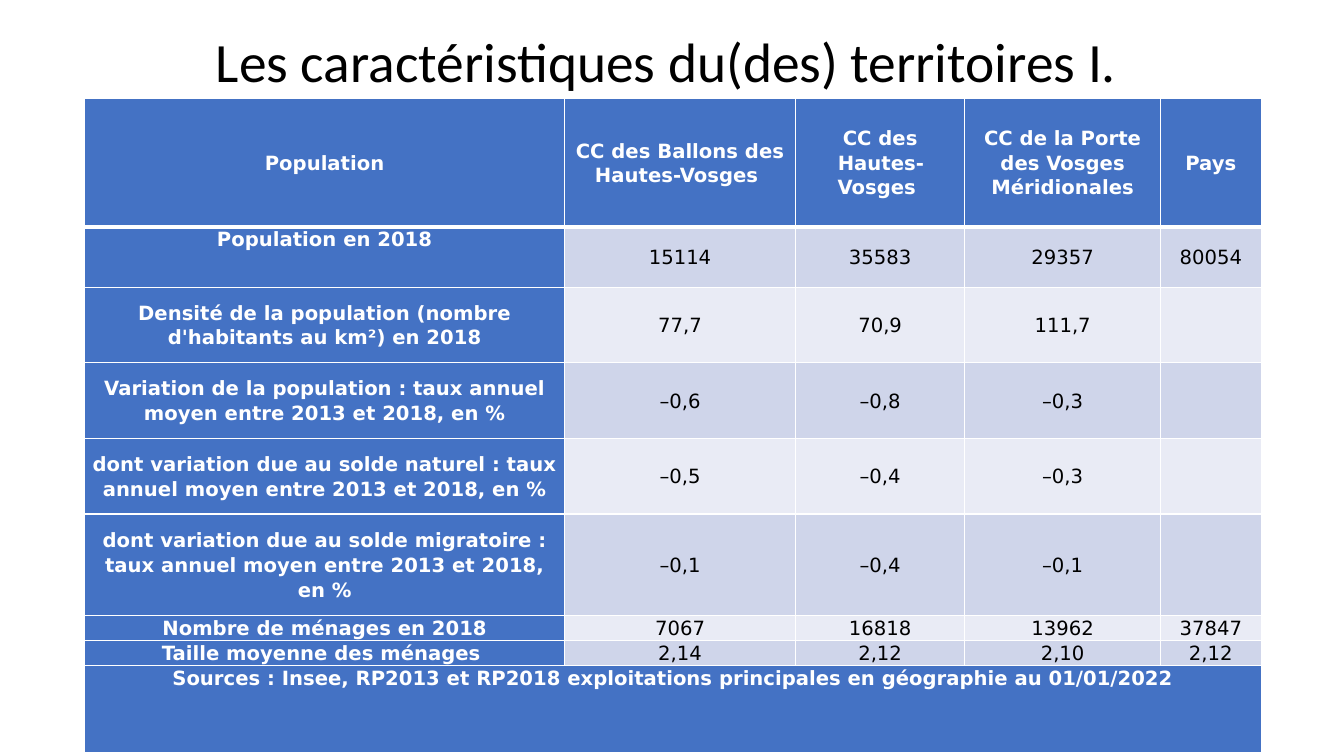
import pptx
import pptx.dml.color
import pptx.enum.text
import pptx.oxml
import pptx.oxml.ns
import pptx.util

Inches, Pt = pptx.util.Inches, pptx.util.Pt
RGBColor = pptx.dml.color.RGBColor
ANCHOR = pptx.enum.text.MSO_ANCHOR
CENTER = pptx.enum.text.PP_ALIGN.CENTER

BLUE = RGBColor(0x44, 0x72, 0xC4)
BANDS = RGBColor(0xCF, 0xD5, 0xEA), RGBColor(0xE9, 0xEB, 0xF5)
WHITE = RGBColor(255, 255, 255)
BLACK = RGBColor(0, 0, 0)

TITLE = "Les caractéristiques du(des) territoires I. "
HEADER = ["Population", "CC des Ballons des Hautes-Vosges ",
          "CC des Hautes-Vosges ",
          "CC de la Porte des Vosges Méridionales", "Pays"]
INDICATORS = [
    ["Population en 2018", "15114", "35583", "29357", "80054"],
    ["Densité de la population (nombre d'habitants au km²) en 2018",
     "77,7", "70,9", "111,7", ""],
    ["Variation de la population : taux annuel moyen entre 2013 et 2018, en %",
     "–0,6", "–0,8", "–0,3", ""],
    ["dont variation due au solde naturel : taux annuel moyen entre 2013 et 2018, en %",
     "–0,5", "–0,4", "–0,3", ""],
    ["dont variation due au solde migratoire : taux annuel moyen entre 2013 et 2018, en %",
     "–0,1", "–0,4", "–0,1", ""],
    ["Nombre de ménages en 2018", "7067", "16818", "13962", "37847"],
    ["Taille moyenne des ménages ", "2,14", "2,12", "2,10", "2,12"],
]
SOURCES = ("Sources : Insee, RP2013 et RP2018 exploitations principales "
           "en géographie au 01/01/2022")
ROWS = [HEADER, *INDICATORS, [SOURCES, "", "", "", ""]]
COL_WIDTHS = [4.76, 2.29, 1.68, 1.94, 1]
ROW_HEIGHTS = [1.27, 0.6, 0.75, 0.75, 0.75, 1.01, 0.24, 0.24, 0.87]
LAST = len(ROWS) - 1
TOP_ANCHORED = {(1, 0), (LAST, 0)}


def add_borders(cell, bottom_width):
    """Give the cell white borders, 1 pt except at the bottom."""
    tcPr = cell._tc.get_or_add_tcPr()
    for side, width in zip("LRTB", (1, 1, 1, bottom_width)):
        tcPr.append(pptx.oxml.parse_xml(
            f'<a:ln{side} {pptx.oxml.ns.nsdecls("a")} w="{Pt(width)}">'
            f'<a:solidFill><a:srgbClr val="{WHITE}"/></a:solidFill>'
            f'</a:ln{side}>'))


def format_cell(cell, row, col):
    """Fill one table cell and write its text."""
    is_heading = row in (0, LAST) or col == 0
    add_borders(cell, 3 if row == 0 else 1)
    cell.fill.solid()
    cell.fill.fore_color.rgb = BLUE if is_heading else BANDS[(row - 1) % 2]
    cell.margin_left = cell.margin_right = Inches(0.05)
    cell.margin_top = cell.margin_bottom = 0
    cell.vertical_anchor = (ANCHOR.TOP if (row, col) in TOP_ANCHORED
                            else ANCHOR.MIDDLE)
    cell.text = ROWS[row][col]
    p = cell.text_frame.paragraphs[0]
    p.alignment = CENTER
    p.line_spacing = 1.07
    p.font.name, p.font.size = "DejaVu Sans", Pt(14)
    p.font.bold = is_heading
    p.font.color.rgb = WHITE if is_heading else BLACK


def add_title(s):
    """Place and format the slide title."""
    title = s.shapes.title
    title.left, title.top = Inches(0.92), Inches(0.4)
    title.width, title.height = Inches(11.5), Inches(0.49)
    tf = title.text_frame
    tf.text = TITLE
    tf.auto_size = pptx.enum.text.MSO_AUTO_SIZE.NONE
    tf.vertical_anchor = ANCHOR.MIDDLE
    p = tf.paragraphs[0]
    p.alignment = CENTER
    p.line_spacing = 0.9
    p.font.name, p.font.size = "Calibri", Pt(39.6)
    p.font.color.rgb = BLACK


def add_population_table(s):
    """Add the table of indicators, with the sources across the last row."""
    table = s.shapes.add_table(
        len(ROWS), len(HEADER), Inches(0.84), Inches(0.98),
        Inches(sum(COL_WIDTHS)), Inches(sum(ROW_HEIGHTS))).table
    for column, width in zip(table.columns, COL_WIDTHS):
        column.width = Inches(width)
    for row, height in zip(table.rows, ROW_HEIGHTS):
        row.height = Inches(height)
    for row in range(len(ROWS)):
        for col in range(len(HEADER)):
            format_cell(table.cell(row, col), row, col)
    table.cell(LAST, 0).merge(table.cell(LAST, len(HEADER) - 1))


prs = pptx.Presentation()
prs.slide_width, prs.slide_height = Inches(13.33), Inches(7.5)
s = prs.slides.add_slide(prs.slide_layouts[5])
add_title(s)
add_population_table(s)
prs.save("out.pptx")
